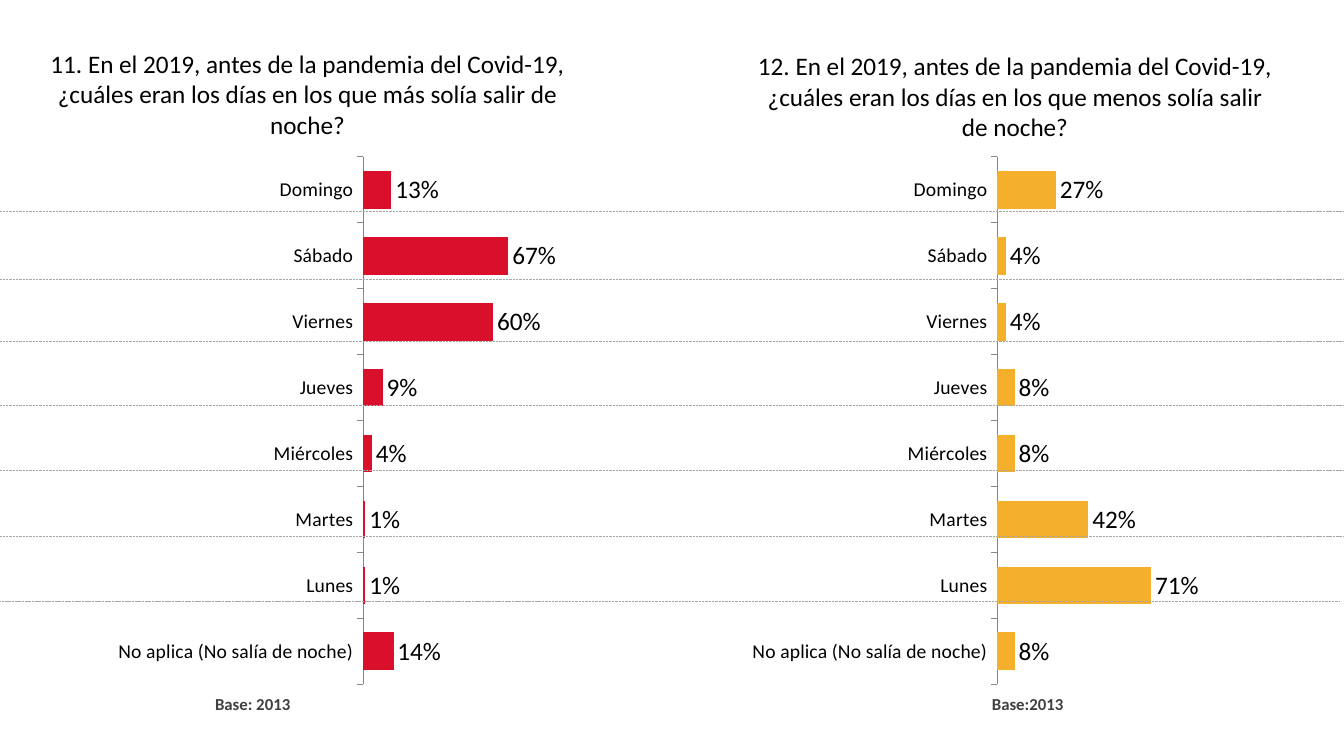
from dataclasses import dataclass

from lxml import etree
from pptx import Presentation
from pptx.chart.data import CategoryChartData
from pptx.dml.color import RGBColor
from pptx.enum.chart import XL_CHART_TYPE, XL_LABEL_POSITION, XL_TICK_MARK
from pptx.enum.dml import MSO_LINE
from pptx.enum.shapes import MSO_CONNECTOR
from pptx.enum.text import MSO_ANCHOR, PP_ALIGN
from pptx.oxml import parse_xml
from pptx.oxml.ns import qn
from pptx.slide import Slide
from pptx.text.text import Font
from pptx.util import Cm, Pt

BAR_CLUSTERED = XL_CHART_TYPE.BAR_CLUSTERED
OUTSIDE_END = XL_LABEL_POSITION.OUTSIDE_END
TICK_OUTSIDE = XL_TICK_MARK.OUTSIDE
SHORT_DASH = MSO_LINE.SQUARE_DOT
STRAIGHT = MSO_CONNECTOR.STRAIGHT
BOTTOM = MSO_ANCHOR.BOTTOM
CENTER, RIGHT = PP_ALIGN.CENTER, PP_ALIGN.RIGHT

FONT = "Calibri"
BLACK, DARK_GREY, AXIS_GREY, RULE_GREY = "000000", "404040", "868686", "A6A6A6"
SLIDE_WIDTH, SLIDE_HEIGHT = 33.87, 19.05
CHART_TOP, CHART_WIDTH, CHART_HEIGHT = 3.68, 12.12, 13.84
BASE_TOP, BASE_HEIGHT = 17.5, 0.64
TITLE_HEIGHT = 3.33

DAYS = ["No aplica (No salía de noche)", "Lunes", "Martes", "Miércoles",
        "Jueves", "Viernes", "Sábado", "Domingo"]

SHADOW_XML = (
    '<a:effectLst xmlns:a="http://schemas.openxmlformats.org/drawingml/2006/main">'
    '<a:outerShdw blurRad="40000" dist="20000" dir="5400000" rotWithShape="0">'
    '<a:srgbClr val="000000"><a:alpha val="38000"/></a:srgbClr>'
    '</a:outerShdw></a:effectLst>'
)


@dataclass(frozen=True)
class Question:
    """One survey question; lengths are in centimetres."""
    title: str
    title_left: float
    title_top: float
    title_width: float
    chart_left: float
    shares: tuple[float, ...]
    bar_color: str
    base: str
    base_left: float
    base_width: float


@dataclass(frozen=True)
class DayRule:
    """Dashed line between two days, in centimetres."""
    y: float
    left: float = 0


QUESTIONS = [
    Question("11. En el 2019, antes de la pandemia del Covid-19, ¿cuáles eran "
             "los días en los que más solía salir de noche?",
             1.02, 0.3, 13.46, 2.74,
             (0.14, 0.01, 0.01, 0.04, 0.09, 0.6, 0.67, 0.13), "DA0F2B",
             "Base: 2013", 5.13, 2.44),
    Question("12. En el 2019, antes de la pandemia del Covid-19, ¿cuáles eran "
             "los días en los que menos solía salir de noche?",
             18.72, 0.36, 13.72, 18.72,
             (0.08, 0.71, 0.42, 0.08, 0.08, 0.04, 0.04, 0.27), "F5B02B",
             "Base:2013", 24.71, 2.34),
]
DAY_RULES = [DayRule(5.33), DayRule(7.04), DayRule(8.59), DayRule(10.21),
             DayRule(11.86), DayRule(13.51), DayRule(15.14, -0.1)]


def rgb(color: str) -> RGBColor:
    return RGBColor.from_string(color)


def style_font(font: Font, size: float, color: str = BLACK, bold: bool = False) -> None:
    font.name = FONT
    font.size = Pt(size)
    font.bold = bold
    font.color.rgb = rgb(color)


def add_title(slide: Slide, question: Question) -> None:
    title = slide.shapes.add_textbox(
        Cm(question.title_left), Cm(question.title_top),
        Cm(question.title_width), Cm(TITLE_HEIGHT)).text_frame
    title.word_wrap = True
    title.vertical_anchor = BOTTOM
    title.text = question.title
    title.paragraphs[0].alignment = CENTER
    style_font(title.paragraphs[0].runs[0].font, 18)


def add_base(slide: Slide, question: Question) -> None:
    """Write the number of answers below the chart."""
    base = slide.shapes.add_textbox(
        Cm(question.base_left), Cm(BASE_TOP),
        Cm(question.base_width), Cm(BASE_HEIGHT)).text_frame
    base.word_wrap = False
    base.text = question.base
    paragraph = base.paragraphs[0]
    paragraph.alignment = RIGHT
    paragraph.line_spacing = Pt(10)
    style_font(paragraph.runs[0].font, 12, DARK_GREY, bold=True)


def add_day_chart(slide: Slide, question: Question) -> None:
    chart_data = CategoryChartData(number_format="0%")
    chart_data.categories = DAYS
    chart_data.add_series("Series 1", question.shares)
    chart = slide.shapes.add_chart(
        BAR_CLUSTERED, Cm(question.chart_left), Cm(CHART_TOP),
        Cm(CHART_WIDTH), Cm(CHART_HEIGHT), chart_data).chart
    chart.has_legend = False
    chart.has_title = False
    style_font(chart.font, 18)

    day_axis = chart.category_axis
    day_axis.major_tick_mark = TICK_OUTSIDE
    day_axis.format.line.color.rgb = rgb(AXIS_GREY)
    style_font(day_axis.tick_labels.font, 14)

    share_axis = chart.value_axis
    share_axis.minimum_scale = 0
    share_axis.maximum_scale = 1
    share_axis.has_major_gridlines = False
    share_axis.visible = False

    plot = chart.plots[0]
    plot.gap_width = 75
    plot.vary_by_categories = False
    bars = plot.series[0].format
    bars.fill.solid()
    bars.fill.fore_color.rgb = rgb(question.bar_color)

    plot.has_data_labels = True
    labels = plot.data_labels
    labels.show_value = True
    labels.position = OUTSIDE_END
    labels.number_format = "0%"
    labels.number_format_is_linked = False
    style_font(labels.font, 18)


def add_day_rule(slide: Slide, rule: DayRule) -> None:
    connector = slide.shapes.add_connector(
        STRAIGHT, Cm(rule.left), Cm(rule.y),
        Cm(rule.left + SLIDE_WIDTH), Cm(rule.y))
    connector.line.color.rgb = rgb(RULE_GREY)
    connector.line.width = Pt(0.25)
    connector.line.dash_style = SHORT_DASH
    properties: etree._Element = connector._element.find(qn("p:spPr"))
    properties.append(parse_xml(SHADOW_XML))


def main() -> None:
    presentation = Presentation()
    presentation.slide_width = Cm(SLIDE_WIDTH)
    presentation.slide_height = Cm(SLIDE_HEIGHT)
    slide = presentation.slides.add_slide(presentation.slide_layouts[6])
    for question in QUESTIONS:
        add_title(slide, question)
        add_base(slide, question)
        add_day_chart(slide, question)
    for rule in DAY_RULES:
        add_day_rule(slide, rule)
    presentation.save("out.pptx")


if __name__ == "__main__":
    main()
